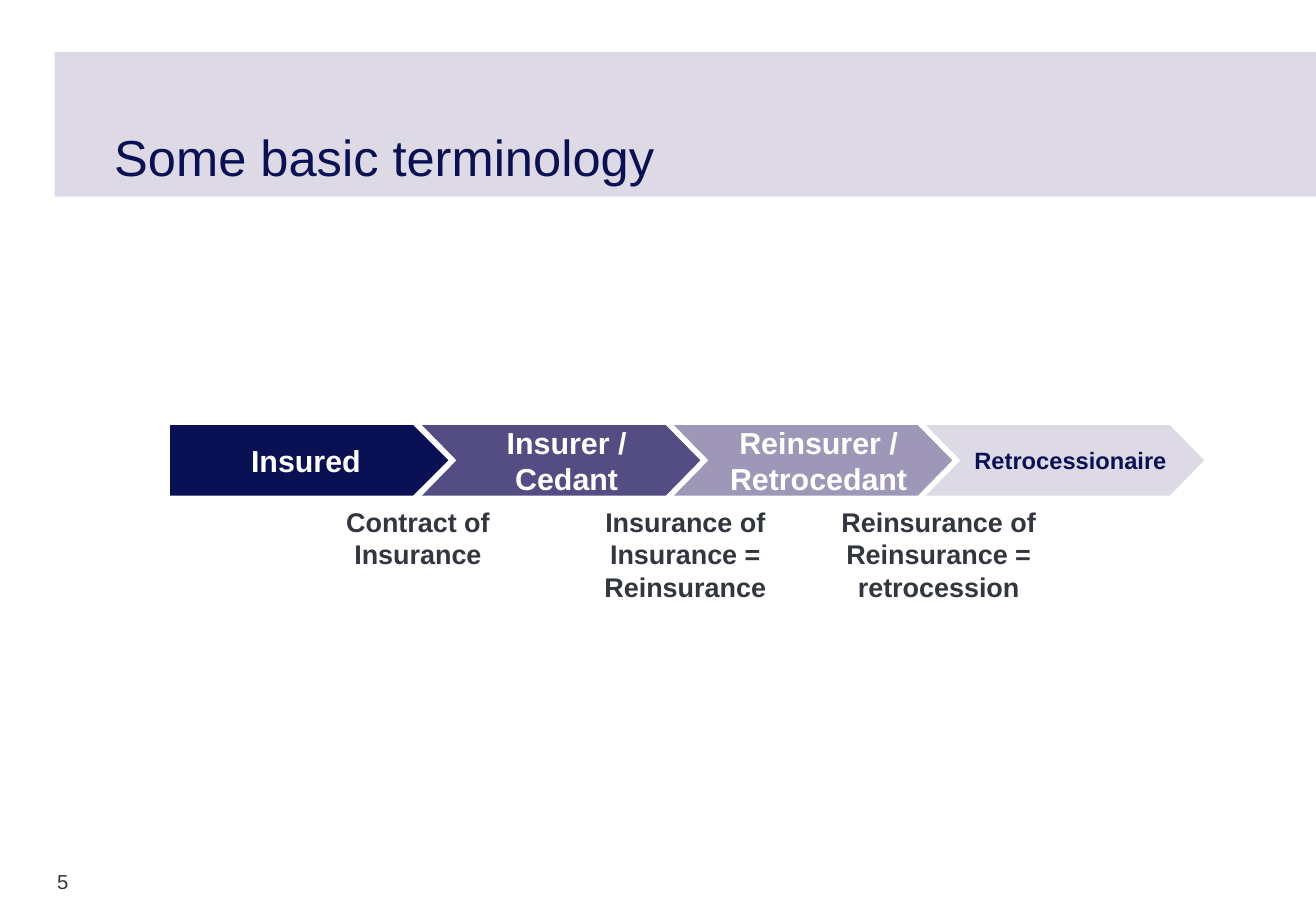
from pptx import Presentation
from pptx.dml.color import RGBColor
from pptx.enum.shapes import MSO_SHAPE
from pptx.enum.text import MSO_ANCHOR, MSO_AUTO_SIZE, PP_ALIGN
from pptx.util import Inches, Pt

NAVY = RGBColor(0x0A, 0x10, 0x54)
PLUM = RGBColor(0x53, 0x4D, 0x84)
MAUVE = RGBColor(0x9E, 0x97, 0xB8)
PALE = RGBColor(0xDD, 0xDA, 0xE6)
WHITE = RGBColor(0xFF, 0xFF, 0xFF)
SLATE = RGBColor(0x32, 0x36, 0x3F)

STEPS = [
    ("Insured", MSO_SHAPE.PENTAGON, 0.5, NAVY, WHITE, 18),
    ("Insurer / Cedant", MSO_SHAPE.CHEVRON, 0.49, PLUM, WHITE, 18),
    ("Reinsurer / Retrocedant", MSO_SHAPE.CHEVRON, 0.49, MAUVE, WHITE, 18),
    ("Retrocessionaire", MSO_SHAPE.CHEVRON, 0.49, PALE, NAVY, 14),
]
LINKS = [
    ("Contract of Insurance", 1.34, 1.4, 0.54),
    ("Insurance of Insurance = Reinsurance", 3.52, 1.44, 0.81),
    ("Reinsurance of Reinsurance = retrocession", 5.29, 2.07, 0.81),
]


def apply(item, style):
    """Set each attribute of an item from a dict."""
    for name, value in style.items():
        setattr(item, name, value)


def write(shape, text, size, color, bold=False, align=PP_ALIGN.LEFT,
          anchor=MSO_ANCHOR.TOP, inset=(0, 0, 0, 0)):
    """Fill a shape with one formatted paragraph."""
    frame = shape.text_frame
    left, top, right, base = map(Inches, inset)
    apply(frame, {
        "text": text, "word_wrap": True, "auto_size": MSO_AUTO_SIZE.NONE,
        "vertical_anchor": anchor, "margin_left": left, "margin_top": top,
        "margin_right": right, "margin_bottom": base,
    })
    para = frame.paragraphs[0]
    para.alignment = align
    font = para.runs[0].font
    apply(font, {"name": "Arial", "size": Pt(size), "bold": bold})
    font.color.rgb = color


def block(slide, kind, box, fill):
    """Add a flat preset shape without outline."""
    shape = slide.shapes.add_shape(kind, *map(Inches, box))
    shape.shadow.inherit = False
    shape.fill.solid()
    shape.fill.fore_color.rgb = fill
    shape.line.fill.background()
    return shape


def header(slide, left, top, width, height):
    """Place the band and the title on it."""
    band = block(slide, MSO_SHAPE.RECTANGLE, (left, top, width, height), PALE)
    slide.shapes._spTree.insert(2, band._element)
    title = slide.shapes.title
    apply(title, {
        "left": Inches(left + 0.49), "top": Inches(top + 0.17),
        "width": Inches(8.98), "height": Inches(0.94),
    })
    write(title, "Some basic terminology", 30, NAVY, anchor=MSO_ANCHOR.BOTTOM)


def label(slide, box, text, size, **style):
    """Add a plain text box."""
    shape = slide.shapes.add_textbox(*map(Inches, box))
    write(shape, text, size, SLATE, **style)


def chain(slide, left, top, width, height):
    """Place the arrow steps and the contracts that link them."""
    span = 2.29
    pitch = (width - span) / (len(STEPS) - 1)
    for i, (text, kind, point, fill, color, size) in enumerate(STEPS):
        step = block(slide, kind, (left + i * pitch, top, span, height), fill)
        step.adjustments[0] = point
        write(step, text, size, color, True, PP_ALIGN.CENTER,
              MSO_ANCHOR.MIDDLE, (0.09, 0.09, 0, 0.09))
    for text, shift, wide, high in LINKS:
        box = (left + shift, top + height + 0.08, wide, high)
        label(slide, box, text, 16, bold=True, align=PP_ALIGN.CENTER)


def main():
    """Build and save the slide."""
    deck = Presentation()
    apply(deck, {"slide_width": Inches(10.83), "slide_height": Inches(7.5)})
    slide = deck.slides.add_slide(deck.slide_layouts[5])
    header(slide, 0.45, 0.43, 10.38, 1.19)
    chain(slide, 1.4, 3.5, 8.51, 0.58)
    label(slide, (0.47, 7.16, 0.39, 0.26), "5", 12)
    deck.save("out.pptx")


if __name__ == "__main__":
    main()
